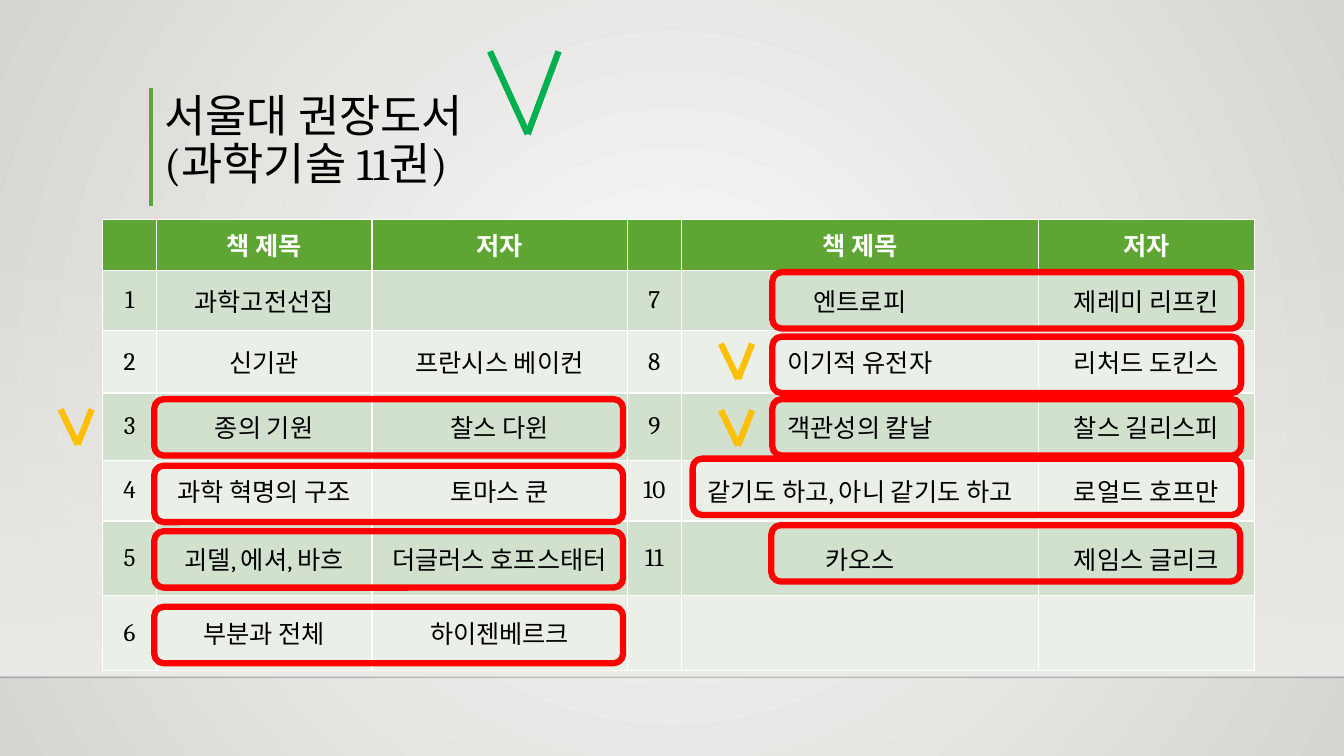
"""Build a slide listing eleven recommended science books with marked rows."""
from lxml import etree
from pptx import Presentation
from pptx.dml.color import RGBColor
from pptx.enum.shapes import MSO_CONNECTOR, MSO_SHAPE
from pptx.enum.text import MSO_ANCHOR, PP_ALIGN
from pptx.oxml.ns import qn
from pptx.util import Inches, Pt

LINE = MSO_CONNECTOR.STRAIGHT
RECT, ROUND = MSO_SHAPE.RECTANGLE, MSO_SHAPE.ROUNDED_RECTANGLE
MID, LOW = MSO_ANCHOR.MIDDLE, MSO_ANCHOR.BOTTOM
MIDDLE, LEFT = PP_ALIGN.CENTER, PP_ALIGN.LEFT
WIDE, HIGH = 13.33, 7.5
THEME = {name: RGBColor.from_string(code) for name, code in {
    "glow": "FAFAF9", "edge": "D7D5D2", "floor": "EDEBE7", "rule": "000001",
    "head": "5FA534", "odd": "D2E1CE", "even": "EAF0E8", "ink": "000000",
    "white": "FFFFFF", "ring": "FF0000", "green": "00B050", "gold": "FFC000",
}.items()}
THEME.update(font="Cambria", title=Pt(32), body=Pt(18), thick=4.5)


def fade(part, share):
    """Set the opacity of the first colour inside an element, in percent."""
    color = next(part.iter(qn("a:srgbClr")))
    etree.SubElement(color, qn("a:alpha"), val=str(share * 1000))


def stroke(start, end, color, width):
    """Draw a plain straight line and return it."""
    line = slide.shapes.add_connector(LINE, *map(Inches, start + end))
    line.line.color.rgb = THEME[color]
    line.line.width = Pt(width)
    etree.SubElement(line._element.spPr, qn("a:effectLst"))
    return line


deck = Presentation()
deck.slide_width, deck.slide_height = Inches(WIDE), Inches(HIGH)
slide = deck.slides.add_slide(deck.slide_layouts[5])

back = slide.background.fill
back.gradient()
for stop, name in zip(back.gradient_stops, ("glow", "edge")):
    stop.color.rgb = THEME[name]
grad = next(slide._element.iter(qn("a:gradFill")))
ray = etree.Element(qn("a:path"), path="circle")
etree.SubElement(ray, qn("a:fillToRect"), l="50000", t="50000", r="50000", b="50000")
grad.replace(grad.find(qn("a:lin")), ray)

floor = slide.shapes.add_shape(RECT, 0, Inches(2.2), Inches(WIDE), Inches(4.5))
floor.shadow.inherit = False
floor.line.fill.background()
floor.fill.gradient()
floor.fill.gradient_angle = 270
for stop in floor.fill.gradient_stops:
    stop.color.rgb = THEME["floor"]
fade(floor._element.spPr, 0)
fade(stroke((0, 6.72), (WIDE, 6.72), "rule", 1)._element.spPr, 20)
stroke((1.5, 0.87), (1.5, 2.04), "head", 3)

title = slide.shapes.title
for key, size in dict(left=1.53, top=0.79, width=10.41, height=1.15).items():
    setattr(title, key, Inches(size))
title.text_frame.text = "서울대 권장도서\v(과학기술 11권)"
title.text_frame.vertical_anchor = LOW
para = title.text_frame.paragraphs[0]
para.alignment, para.line_spacing = LEFT, 0.9
for key, value in dict(name=THEME["font"], size=THEME["title"]).items():
    setattr(para.font, key, value)
para.font.color.rgb = THEME["ink"]

books = [
    ("", "책 제목", "저자", "", "책 제목", "저자"),
    ("1", "과학고전선집", "", "7", "엔트로피", "제레미 리프킨"),
    ("2", "신기관", "프란시스 베이컨", "8", "이기적 유전자", "리처드 도킨스"),
    ("3", "종의 기원", "찰스 다윈", "9", "객관성의 칼날", "찰스 길리스피"),
    ("4", "과학 혁명의 구조", "토마스 쿤", "10", "같기도 하고, 아니 같기도 하고", "로얼드 호프만"),
    ("5", "괴델, 에셔, 바흐", "더글러스 호프스태터", "11", "카오스", "제임스 글리크"),
    ("6", "부분과 전체", "하이젠베르크", "", "", ""),
]
cols = (0.53, 2.14, 2.53, 0.54, 3.54, 2.14)
rows = (0.5, 0.6, 0.62, 0.67, 0.6, 0.74, 0.74)
table = slide.shapes.add_table(
    len(rows), len(cols), *map(Inches, (1.02, 2.18, sum(cols), sum(rows)))).table
for col, width in zip(table.columns, cols):
    col.width = Inches(width)
for r, (high, book) in enumerate(zip(rows, books)):
    table.rows[r].height = Inches(high)
    tint = "head" if r == 0 else "odd" if r % 2 else "even"
    for c, text in enumerate(book):
        cell = table.cell(r, c)
        cell.fill.solid()
        cell.fill.fore_color.rgb = THEME[tint]
        cell.vertical_anchor = MID
        cell.text = text
        para = cell.text_frame.paragraphs[0]
        para.alignment = MIDDLE
        form = dict(name=THEME["font"], size=THEME["body"], bold=r == 0)
        for key, value in form.items():
            setattr(para.font, key, value)
        para.font.color.rgb = THEME["ink" if r else "white"]

rings = [(1.53, top, 4.65) for top in (3.96, 4.62, 5.27, 6.02)]
rings += [(7.66, top, 4.65) for top in (2.7, 3.34, 3.96)]
rings += [(6.87, 4.55, 5.44), (7.65, 5.21, 4.65)]
for left, top, width in rings:
    ring = slide.shapes.add_shape(ROUND, *map(Inches, (left, top, width, 0.56)))
    ring.shadow.inherit = False
    ring.fill.background()
    ring.line.color.rgb = THEME["ring"]
    ring.line.width = Pt(THEME["thick"])

ticks = [(4.86, 0.51, 0.68, 0.82, "green")]
ticks += [(left, top, 0.31, 0.35, "gold")
          for left, top in ((0.6, 4.06), (7.15, 3.41), (7.15, 4.07))]
for left, top, width, high, color in ticks:
    tip = (left + 0.55 * width, top + high)
    stroke((left, top), tip, color, THEME["thick"])
    stroke(tip, (left + width, top), color, THEME["thick"])

deck.save("out.pptx")
